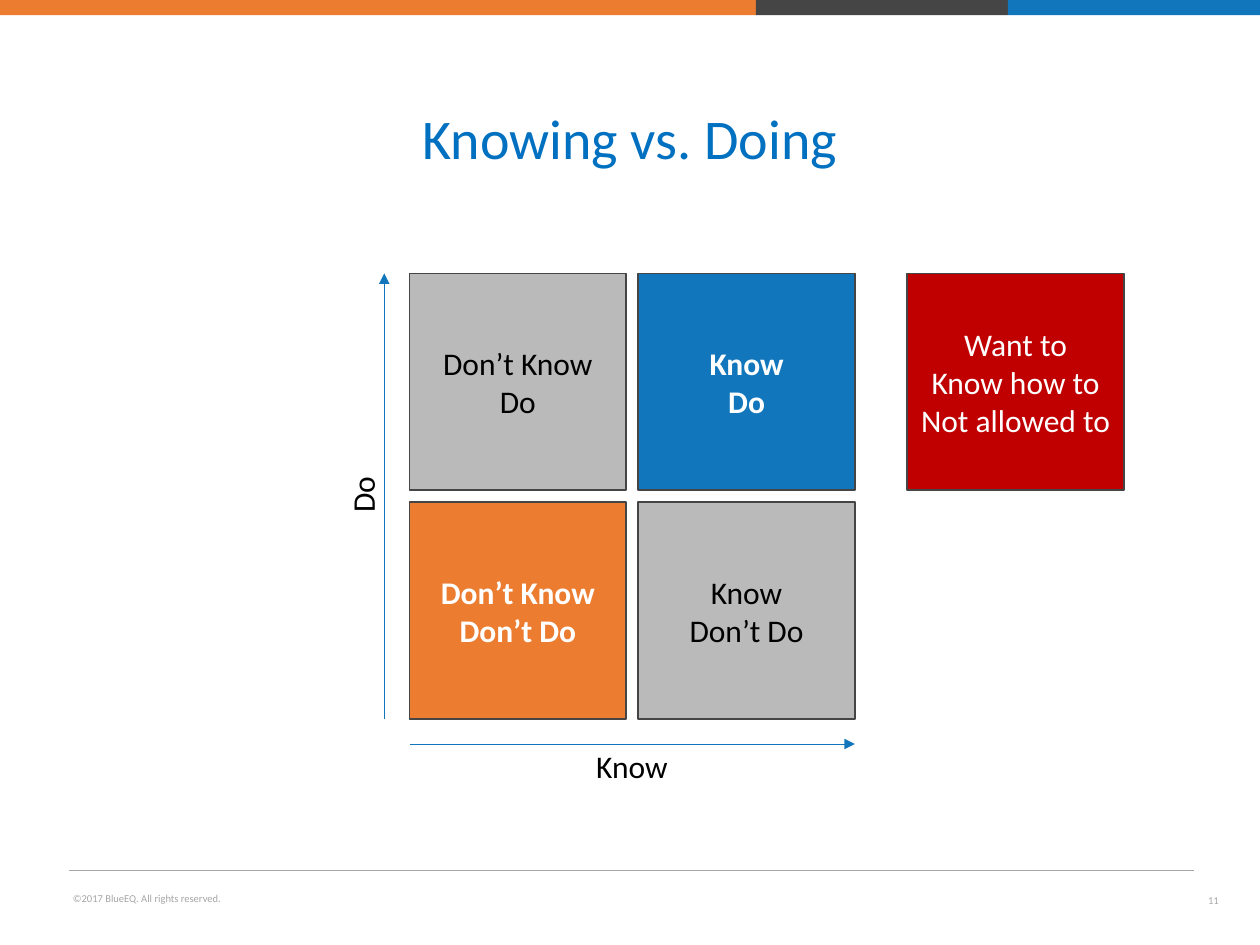
from lxml import etree
from pptx import Presentation, util as u
from pptx.dml.color import RGBColor
from pptx.enum import shapes, text
from pptx.oxml.ns import qn

ORANGE = RGBColor(0xEC, 0x7C, 0x2F)
CHARCOAL = RGBColor(0x45, 0x45, 0x45)
BLUE = RGBColor(0x11, 0x76, 0xBB)
TITLE_BLUE = RGBColor(0x00, 0x70, 0xC0)
RED = RGBColor(0xC0, 0x00, 0x00)
SILVER = RGBColor(0xBA, 0xBA, 0xBA)
FOOTER_GRAY = RGBColor(0xA6, 0xA6, 0xA6)
BLACK = RGBColor(0, 0, 0)
WHITE = RGBColor(0xFF, 0xFF, 0xFF)

FONT = "Calibri"
WIDTH, HEIGHT = 10, 7.5

# Matrix grid, in inches
LEFT, TOP = 3.25, 2.17
CELL, PITCH = 1.72, 1.815
SPAN = CELL + PITCH
AXIS_GAP = 0.2

# Column, row, fill, font colour, bold, lines
QUADRANTS = [
    (0, 0, SILVER, BLACK, False, "Don’t Know\nDo"),
    (0, 1, ORANGE, WHITE, True, "Don’t Know\nDon’t Do"),
    (1, 1, SILVER, BLACK, False, "Know\nDon’t Do"),
    (1, 0, BLUE, WHITE, True, "Know\nDo"),
]


def inches(*lengths):
    return [u.Inches(length) for length in lengths]


def write(frame, words, size, color, bold=False, align=text.PP_ALIGN.CENTER,
          anchor=text.MSO_ANCHOR.MIDDLE, inset=(0.05, 0.05)):
    frame.text = words
    frame.word_wrap = True
    frame.vertical_anchor = anchor
    frame.margin_left = frame.margin_right = u.Inches(inset[0])
    frame.margin_top = frame.margin_bottom = u.Inches(inset[1])
    for paragraph in frame.paragraphs:
        paragraph.alignment = align
        for run in paragraph.runs:
            run.font.name = FONT
            run.font.size = u.Pt(size)
            run.font.bold = bold
            run.font.color.rgb = color


def add_block(slide, box, fill, outline=None):
    block = slide.shapes.add_shape(shapes.MSO_SHAPE.RECTANGLE, *inches(*box))
    block.shadow.inherit = False
    block.fill.solid()
    block.fill.fore_color.rgb = fill
    if outline is None:
        block.line.fill.background()
    else:
        block.line.color.rgb = outline
        block.line.width = u.Pt(1)
    return block


def add_cell(slide, left, top, fill, color, bold, words):
    cell = add_block(slide, (left, top, CELL, CELL), fill, CHARCOAL)
    write(cell.text_frame, words, 18, color, bold)


def add_label(slide, box, words, size, color, **layout):
    label = slide.shapes.add_textbox(*inches(*box))
    write(label.text_frame, words, size, color, **layout)
    return label


def add_line(slide, start, end, color, width, arrow=False):
    line = slide.shapes.add_connector(
        shapes.MSO_CONNECTOR.STRAIGHT, *inches(*start, *end))
    line.line.color.rgb = color
    line.line.width = u.Pt(width)
    if arrow:
        etree.SubElement(line.line._get_or_add_ln(), qn("a:tailEnd"),
                         type="triangle")
    etree.SubElement(line._element.spPr, qn("a:effectLst"))


def add_frame(slide):
    # Top band, in fifths of the slide width
    fifth = WIDTH / 5
    for start, count, color in [(0, 3, ORANGE), (3, 1, CHARCOAL), (4, 1, BLUE)]:
        add_block(slide, (start * fifth, 0, count * fifth, 0.12), color)

    # Footer
    add_line(slide, (0.55, 6.91), (9.48, 6.91), FOOTER_GRAY, 0.25)
    add_label(slide, (0.48, 7.03, 4.25, 0.2),
              "©2017 BlueEQ. All rights reserved.", 6, FOOTER_GRAY,
              align=text.PP_ALIGN.LEFT, anchor=text.MSO_ANCHOR.TOP,
              inset=(0.1, 0.05))
    add_label(slide, (9.41, 7.01, 0.44, 0.27), "11", 6, FOOTER_GRAY,
              inset=(0.08, 0.04))


def add_title(slide, words):
    title = slide.shapes.title
    title.left, title.top, title.width, title.height = inches(
        0.69, 0.4, 8.62, 1.45)
    write(title.text_frame, words, 32, TITLE_BLUE, inset=(0.1, 0.05))
    title.text_frame.paragraphs[0].line_spacing = 0.9


def add_axes(slide):
    right, bottom = LEFT + SPAN, TOP + SPAN
    know_y, do_x = bottom + AXIS_GAP, LEFT - AXIS_GAP
    add_line(slide, (LEFT, know_y), (right, know_y), BLUE, 0.5, arrow=True)
    add_line(slide, (do_x, bottom), (do_x, TOP), BLUE, 0.5, arrow=True)
    add_label(slide, (4.49, 5.79, 1.05, 0.57), "Know", 18, BLACK)
    do_label = add_label(slide, (2.35, 3.64, 1.05, 0.57), "Do", 18, BLACK)
    do_label.rotation = 270


def main():
    deck = Presentation()
    deck.slide_width, deck.slide_height = inches(WIDTH, HEIGHT)
    slide = deck.slides.add_slide(deck.slide_layouts[5])

    add_frame(slide)
    add_title(slide, "Knowing vs. Doing")

    # Case outside the matrix
    add_cell(slide, 7.2, TOP, RED, WHITE, False,
             "Want to\nKnow how to\nNot allowed to")

    # Matrix
    for column, row, *style in QUADRANTS:
        add_cell(slide, LEFT + column * PITCH, TOP + row * PITCH, *style)
    add_axes(slide)

    deck.save("out.pptx")


if __name__ == "__main__":
    main()
